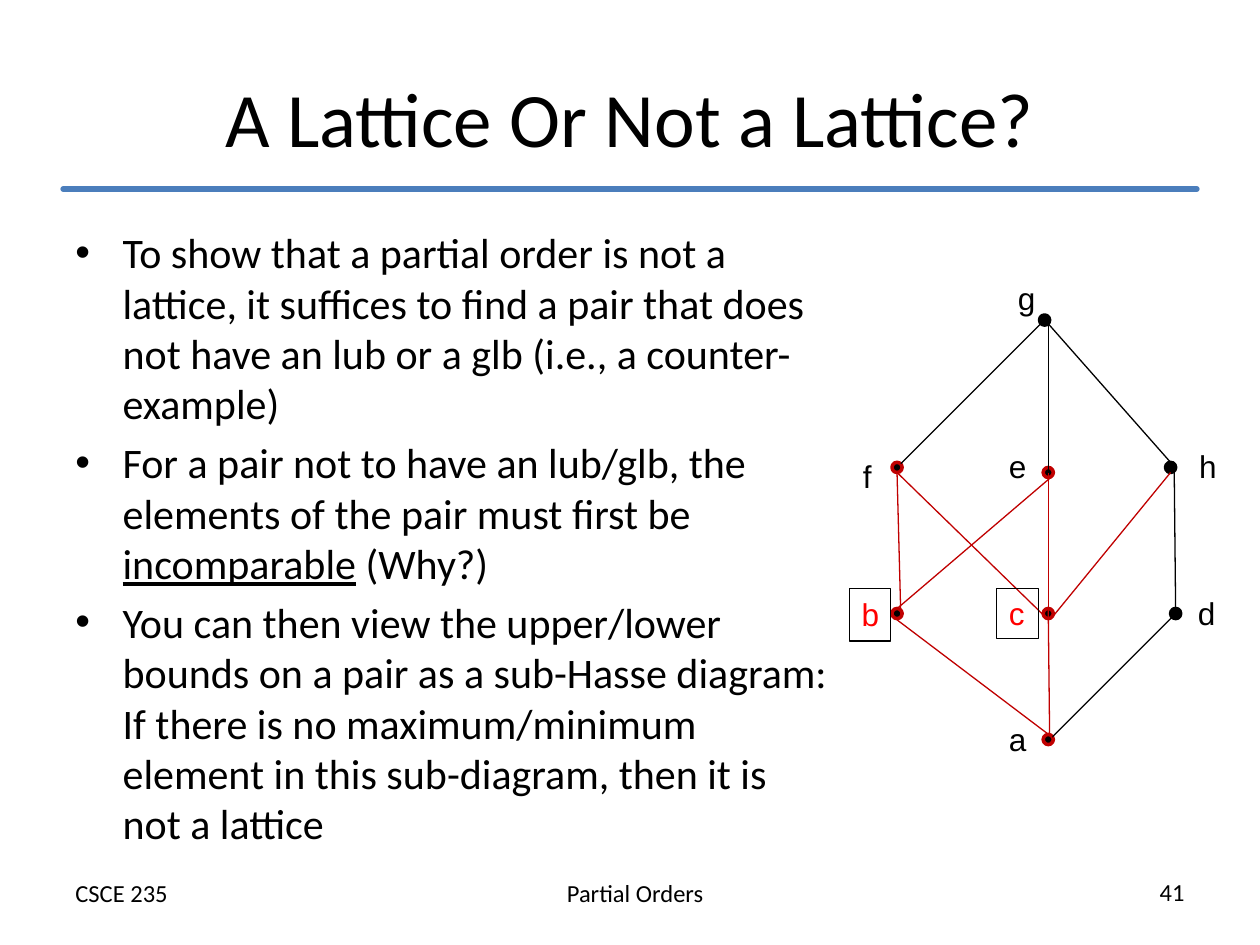
"""Build the slide that asks whether a Hasse diagram is a lattice."""
from dataclasses import dataclass

from lxml.etree import SubElement
from pptx import Presentation
from pptx.dml.color import RGBColor
from pptx.enum.shapes import MSO_CONNECTOR as Connector, MSO_SHAPE as Shape
from pptx.enum.text import MSO_ANCHOR as Anchor, PP_ALIGN as Align
from pptx.oxml.ns import qn
from pptx.util import Pt


@dataclass(frozen=True)
class Theme:
    black: RGBColor = RGBColor(0, 0, 0)
    bound: RGBColor = RGBColor(0xC0, 0, 0)
    pair: RGBColor = RGBColor(0xFF, 0, 0)
    rule: RGBColor = RGBColor(0x4B, 0x7E, 0xBC)
    font: str = "Calibri"
    label_font: str = "Arial"
    title: int = 44
    body: int = 24
    label: int = 18
    footer: int = 14
    thin: float = 0.75
    dot_line: float = 2
    rule_line: float = 3


THEME = Theme()
DOT = 5.8

FOOTERS = [
    ("CSCE 235", 36, 498.2, Align.LEFT),
    ("Partial Orders", 257.8, 498.2, Align.CENTER),
    ("41", 473.8, 497.5, Align.RIGHT),
]

BULLETS = [
    [("To show that a partial order is not a lattice, it suffices to find a pair "
      "that does not have an lub or a glb (i.e., a counter-example)", False)],
    [("For a pair not to have an lub/glb, the elements of the pair must first be ", False),
     ("incomparable", True), (" (Why?)", False)],
    [("You can then view the upper/lower bounds on a pair as a sub-Hasse diagram: "
      "If there is no maximum/minimum element in this sub-diagram, "
      "then it is not a lattice", False)],
]

NODES = {
    "a": (599, 422.6, THEME.bound),
    "b": (512.6, 350.6, THEME.bound),
    "c": (599, 350.6, THEME.bound),
    "d": (671.8, 350.6, THEME.black),
    "e": (599, 270, THEME.bound),
    "f": (512.6, 267.1, THEME.bound),
    "g": (596.9, 182.9, THEME.black),
    "h": (668.9, 267.1, THEME.black),
}

BLACK_EDGES = [
    ((601.2, 421.2), (669.6, 352.8)),
    ((671.8, 347.8), (671, 269.3)),
    ((668.9, 264.2), (599, 185)),
    ((594.7, 185), (514.8, 265)),
    ((599, 272.9), (599, 185)),
]

BOUND_EDGES = [
    ((601.2, 421.2), (512.6, 354.2)),
    ((599.8, 419.8), (599, 347.8)),
    ((599, 347.8), (599, 270)),
    ((514.8, 352.8), (512.6, 270)),
    ((512.6, 347.8), (601.2, 272.2)),
    ((596.2, 351.4), (512.6, 270)),
    ((601.2, 352.8), (668.9, 270)),
]

LABELS = {
    "a": (569.5, 408.2, 24.5),
    "d": (677.5, 336.2, 24.5),
    "e": (569.5, 252, 24.5),
    "f": (486, 257.8, 19.4),
    "g": (574.6, 156.2, 24.5),
    "h": (678.2, 252, 24.5),
}

PAIR = {
    "b": (485.3, 336.2, 23.8, 30.2),
    "c": (569.5, 336.2, 23.8, 28.8),
}


def add_run(paragraph, text, size, color=THEME.black, font=THEME.font, underline=False):
    run = paragraph.add_run()
    run.text = text
    run.font.name = font
    run.font.size = Pt(size)
    run.font.color.rgb = color
    if underline:
        run.font.underline = True


def add_text_box(slide, box, wrap=True, anchor=Anchor.TOP):
    shape = slide.shapes.add_textbox(*map(Pt, box))
    frame = shape.text_frame
    frame.word_wrap = wrap
    frame.vertical_anchor = anchor
    return frame


def add_line(slide, start, end, color, width):
    line = slide.shapes.add_connector(Connector.STRAIGHT, *map(Pt, (*start, *end)))
    line.line.color.rgb = color
    line.line.width = Pt(width)
    SubElement(line._element.spPr, qn("a:effectLst"))
    return line


def add_bullet(paragraph):
    paragraph.space_before = Pt(THEME.body * 0.2)
    properties = paragraph._p.get_or_add_pPr()
    properties.set("marL", str(Pt(27)))
    properties.set("indent", str(-Pt(27)))
    SubElement(properties, qn("a:buFont"), typeface=THEME.label_font)
    SubElement(properties, qn("a:buChar"), char="•")


def add_dot(slide, x, y, outline):
    dot = slide.shapes.add_shape(
        Shape.OVAL, Pt(x - DOT / 2), Pt(y - DOT / 2), Pt(DOT), Pt(DOT))
    dot.shadow.inherit = False
    dot.fill.solid()
    dot.fill.fore_color.rgb = THEME.black
    dot.line.color.rgb = outline
    dot.line.width = Pt(THEME.dot_line)


def add_label(slide, name, x, y, width):
    frame = add_text_box(slide, (x, y, width, 28.8), wrap=False)
    add_run(frame.paragraphs[0], name, THEME.label, font=THEME.label_font)


def add_pair_box(slide, name, box):
    shape = slide.shapes.add_shape(Shape.RECTANGLE, *map(Pt, box))
    shape.shadow.inherit = False
    shape.fill.background()
    shape.line.color.rgb = THEME.black
    shape.line.width = Pt(THEME.thin)
    frame = shape.text_frame
    frame.word_wrap = False
    frame.vertical_anchor = Anchor.TOP
    paragraph = frame.paragraphs[0]
    paragraph.alignment = Align.LEFT
    add_run(paragraph, name, THEME.label, THEME.pair, THEME.label_font)


def add_frame(slide):
    for text, x, y, alignment in FOOTERS:
        paragraph = add_text_box(slide, (x, y, 210.2, 24.5)).paragraphs[0]
        paragraph.alignment = alignment
        add_run(paragraph, text, THEME.footer)
    rule = add_line(slide, (36, 108), (684, 108), THEME.rule, THEME.rule_line)
    rule.line._get_or_add_ln().set("cap", "rnd")
    title = add_text_box(slide, (36, 21.6, 648, 90), anchor=Anchor.MIDDLE).paragraphs[0]
    title.alignment = Align.CENTER
    add_run(title, "A Lattice Or Not a Lattice?", THEME.title)


def add_body(slide):
    frame = add_text_box(slide, (36, 126, 444.2, 356.4))
    for index, runs in enumerate(BULLETS):
        paragraph = frame.add_paragraph() if index else frame.paragraphs[0]
        add_bullet(paragraph)
        for text, underline in runs:
            add_run(paragraph, text, THEME.body, underline=underline)


def add_diagram(slide):
    for x, y, outline in NODES.values():
        add_dot(slide, x, y, outline)
    for edges, color in ((BLACK_EDGES, THEME.black), (BOUND_EDGES, THEME.bound)):
        for start, end in edges:
            add_line(slide, start, end, color, THEME.thin)
    for name, place in LABELS.items():
        add_label(slide, name, *place)
    for name, box in PAIR.items():
        add_pair_box(slide, name, box)


def main():
    presentation = Presentation()
    presentation.slide_width = Pt(720)
    presentation.slide_height = Pt(540)
    slide = presentation.slides.add_slide(presentation.slide_layouts[6])
    add_frame(slide)
    add_body(slide)
    add_diagram(slide)
    presentation.save("out.pptx")


if __name__ == "__main__":
    main()
